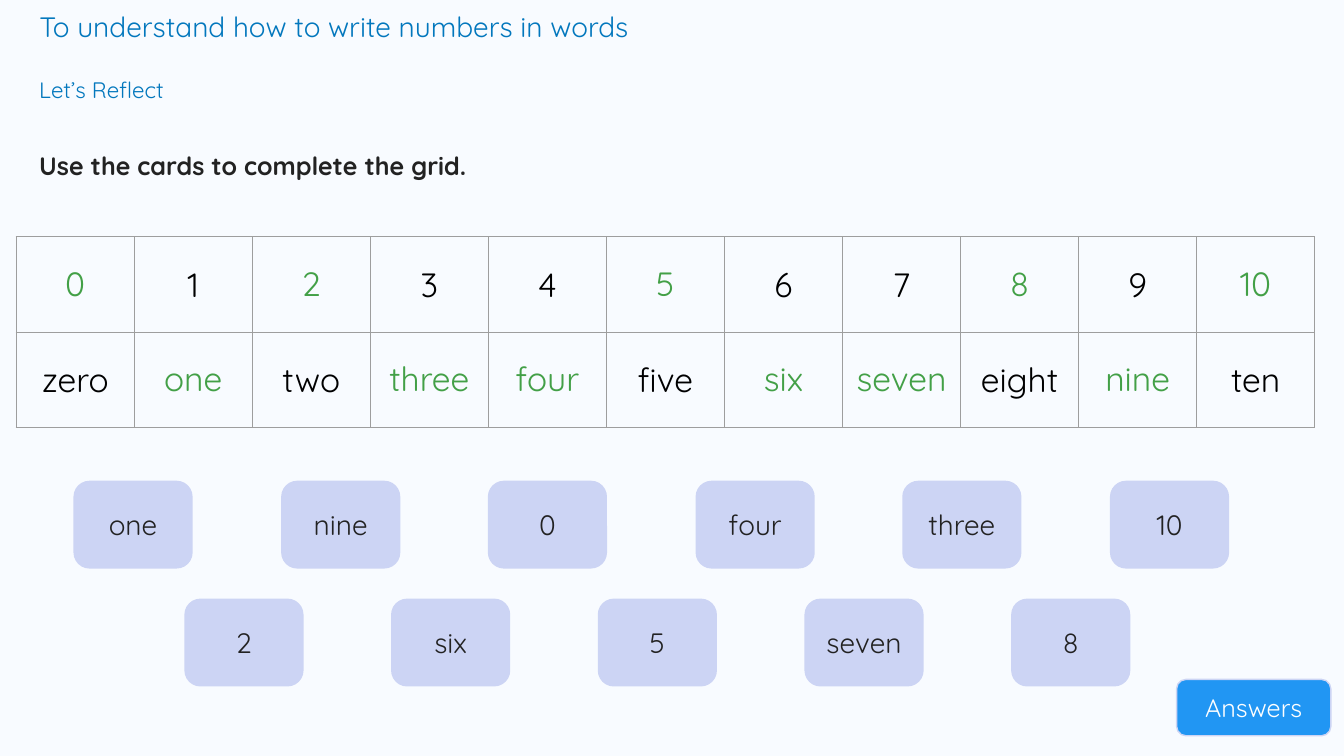
from dataclasses import dataclass

from lxml import etree
from pptx import Presentation
from pptx import util as u
from pptx.dml.color import RGBColor
from pptx.enum import shapes, text
from pptx.oxml.ns import qn

PX = 9144  # 100 px to the inch
FONT = "Quicksand"
PAGE = RGBColor(0xF8, 0xFB, 0xFF)
HEADING = RGBColor(0x02, 0x77, 0xBD)
INK = RGBColor(0x22, 0x22, 0x22)
BLACK = RGBColor(0x00, 0x00, 0x00)
WHITE = RGBColor(0xFF, 0xFF, 0xFF)
ANSWER = RGBColor(0x43, 0xA0, 0x47)
LILAC = RGBColor(0xCC, 0xD4, 0xF4)
BUTTON = RGBColor(0x21, 0x96, 0xF3)
GRID = RGBColor(0x9E, 0x9E, 0x9E)

NUMBERS = [str(number) for number in range(11)]
WORDS = ["zero", "one", "two", "three", "four", "five",
         "six", "seven", "eight", "nine", "ten"]


@dataclass(frozen=True)
class Box:
    left: int
    top: int
    width: int
    height: int

    def emu(self) -> tuple:
        return tuple(u.Emu(side * PX)
                     for side in (self.left, self.top, self.width, self.height))


@dataclass(frozen=True)
class TextStyle:
    size: int
    color: RGBColor
    bold: bool = False
    align: text.PP_ALIGN = text.PP_ALIGN.LEFT


@dataclass(frozen=True)
class CardRow:
    labels: tuple[str, ...]
    first_left: int
    last_left: int
    top: int


CARD_ROWS = (
    CardRow(("one", "nine", "0", "four", "three", "10"), 75, 1103, 479),
    CardRow(("2", "six", "5", "seven", "8"), 185, 1005, 596),
)
CARD_WIDTH, CARD_HEIGHT = 114, 83
CENTER = text.PP_ALIGN.CENTER
CARD_TEXT = TextStyle(20, INK, align=CENTER)
BUTTON_TEXT = TextStyle(18, WHITE, align=CENTER)


def write(frame, words: str, style: TextStyle) -> None:
    paragraph = frame.paragraphs[0]
    paragraph.alignment = style.align
    run = paragraph.add_run()
    run.text = words
    run.font.name = FONT
    run.font.size = u.Pt(style.size)
    run.font.bold = style.bold
    run.font.color.rgb = style.color


def add_title(slide, words: str, box: Box, style: TextStyle) -> None:
    title = slide.shapes.title
    title.left, title.top, title.width, title.height = box.emu()
    frame = title.text_frame
    frame.word_wrap = True
    frame.auto_size = text.MSO_AUTO_SIZE.SHAPE_TO_FIT_TEXT
    frame.vertical_anchor = text.MSO_ANCHOR.TOP
    write(frame, words, style)


def add_label(slide, words: str, box: Box, style: TextStyle,
              line_spacing: float = 1.0) -> None:
    frame = slide.shapes.add_textbox(*box.emu()).text_frame
    frame.word_wrap = True
    frame.paragraphs[0].line_spacing = line_spacing
    write(frame, words, style)


def add_card(slide, words: str, box: Box, fill: RGBColor,
             line_width: float, style: TextStyle) -> None:
    card = slide.shapes.add_shape(shapes.MSO_SHAPE.ROUNDED_RECTANGLE, *box.emu())
    card.shadow.inherit = False
    card.fill.solid()
    card.fill.fore_color.rgb = fill
    card.line.color.rgb = LILAC
    card.line.width = u.Pt(line_width)
    frame = card.text_frame
    frame.word_wrap = True
    frame.vertical_anchor = text.MSO_ANCHOR.MIDDLE
    write(frame, words, style)


def set_borders(cell, color: RGBColor | None) -> None:
    """Line all four sides of a cell, or clear them when there is no colour."""
    properties = cell._tc.get_or_add_tcPr()
    for side in ("lnL", "lnR", "lnT", "lnB"):
        line = etree.SubElement(properties, qn(f"a:{side}"), w=str(u.Pt(0.75)))
        if color is None:
            etree.SubElement(line, qn("a:noFill"))
        else:
            fill = etree.SubElement(line, qn("a:solidFill"))
            etree.SubElement(fill, qn("a:srgbClr"), val=str(color))


def add_grid(slide, top: int, shown: set[str], color: RGBColor,
             border: RGBColor | None) -> None:
    """Draw the number grid with only the shown entries filled in."""
    box = Box(16, top, 1288, 189)
    table = slide.shapes.add_table(2, len(NUMBERS), *box.emu()).table
    table.first_row = False
    table.horz_banding = False
    style = TextStyle(24, color, align=CENTER)
    for row, entries in enumerate((NUMBERS, WORDS)):
        for column, entry in enumerate(entries):
            cell = table.cell(row, column)
            set_borders(cell, border)
            cell.fill.background()
            cell.vertical_anchor = text.MSO_ANCHOR.MIDDLE
            cell.margin_left = cell.margin_right = u.Emu(10 * PX)
            cell.margin_top = cell.margin_bottom = u.Emu(10 * PX)
            if entry in shown:
                write(cell.text_frame, entry, style)


def add_card_row(slide, row: CardRow) -> None:
    pitch = (row.last_left - row.first_left) / (len(row.labels) - 1)
    for index, label in enumerate(row.labels):
        left = round(row.first_left + index * pitch)
        add_card(slide, label, Box(left, row.top, CARD_WIDTH, CARD_HEIGHT),
                 LILAC, 3, CARD_TEXT)


def main() -> None:
    presentation = Presentation()
    presentation.slide_width = u.Emu(1333 * PX)
    presentation.slide_height = u.Emu(750 * PX)
    slide = presentation.slides.add_slide(presentation.slide_layouts[5])
    slide.background.fill.solid()
    slide.background.fill.fore_color.rgb = PAGE

    add_title(slide, "To understand how to write numbers in words",
              Box(29, 4, 1234, 44), TextStyle(20, HEADING))
    add_label(slide, "Let’s Reflect", Box(29, 71, 297, 46), TextStyle(16, HEADING))
    add_label(slide, "Use the cards to complete the grid.",
              Box(29, 129, 795, 92), TextStyle(18, INK, bold=True), 1.5)
    add_card(slide, "Answers", Box(1167, 674, 153, 56), BUTTON, 1, BUTTON_TEXT)

    answers = {label for row in CARD_ROWS for label in row.labels}
    given = set(NUMBERS + WORDS) - answers
    add_grid(slide, 235, given, BLACK, GRID)
    for row in CARD_ROWS:
        add_card_row(slide, row)
    add_grid(slide, 234, answers, ANSWER, None)

    presentation.save("out.pptx")


if __name__ == "__main__":
    main()
